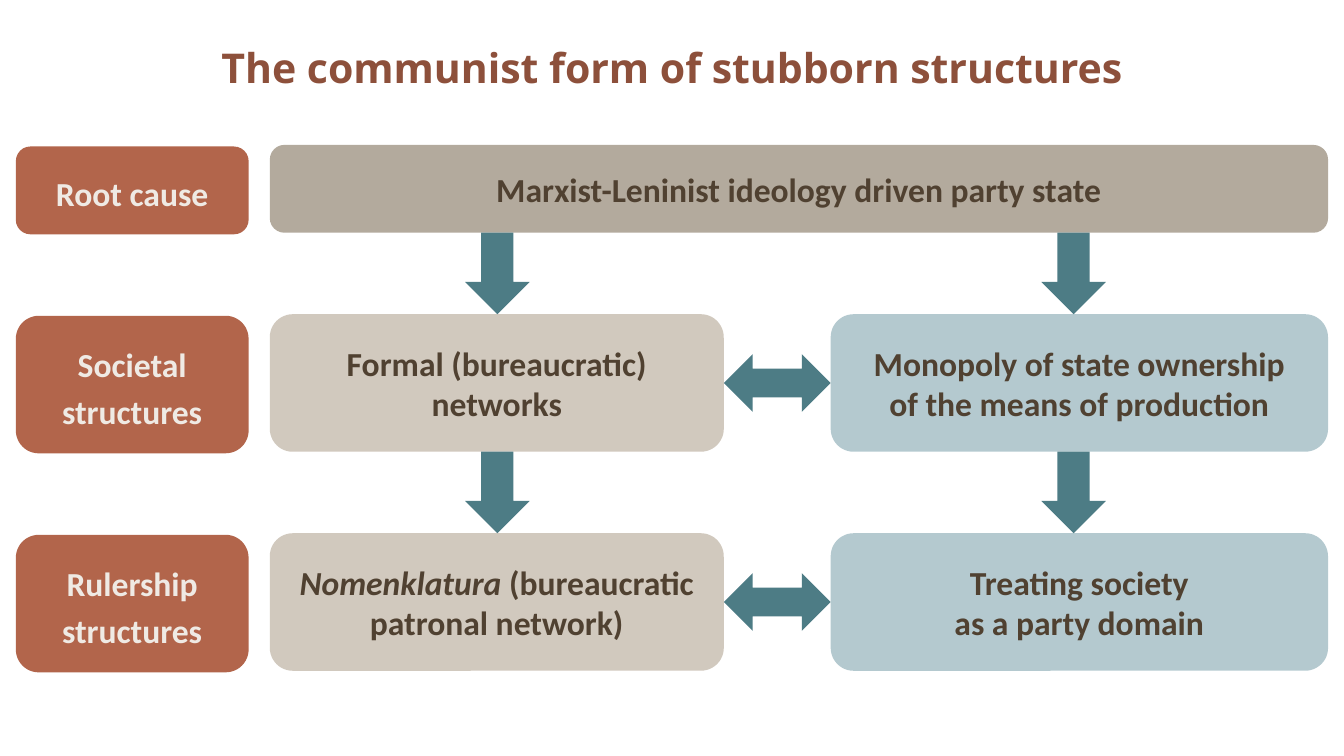
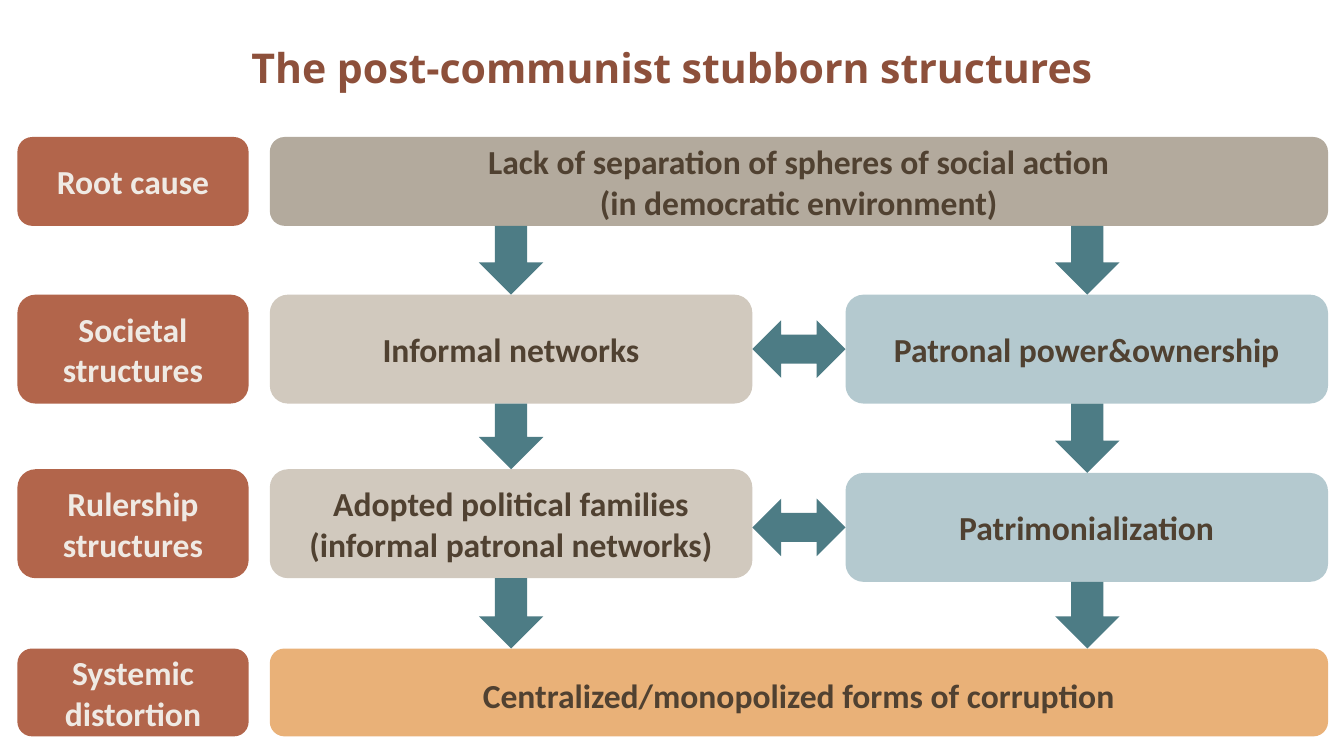
"""Build two slides on communist and post-communist stubborn structures."""
from dataclasses import dataclass

from lxml import etree
from pptx import Presentation
from pptx import util as u
from pptx.dml.color import RGBColor
from pptx.enum import shapes, text
from pptx.oxml.ns import qn

TITLE, LABEL, LABEL_TEXT, BODY_TEXT = "8D503B", "B2654B", "EFEAE4", "504131"
TAUPE, SAND, BLUE, ORANGE, ARROW = "B3AA9D", "D1C9BE", "6B95A1", "E9B178", "4D7C85"
LEFT, RIGHT = 5.1, 25.1
LABEL_RIGHT = 4.7
ARROW_W, ARROW_H = 1.22, 1.09


@dataclass(frozen=True)
class Box:
    """A rectangle in centimetres."""
    x: float
    y: float
    w: float
    h: float

    @property
    def bottom(self) -> float:
        """Return the lower edge."""
        return self.y + self.h


@dataclass(frozen=True)
class Style:
    """The look of a text block."""
    color: str
    size: int = 18
    font: str = "Calibri"
    spacing: float = 1.0
    tight: bool = False


@dataclass(frozen=True)
class Row:
    """A labelled level with one wide cell or two cells."""
    label: str
    top: float
    height: float
    cells: tuple[str, ...]
    fill: str = TAUPE
    right_drop: float = 0
    style: Style = Style(BODY_TEXT)


@dataclass(frozen=True)
class Diagram:
    """The contents and column positions of one slide."""
    title: str
    label_x: float
    label_drop: float
    label_style: Style
    left_w: float
    right_x: float
    arrow_xs: tuple[float, float]
    rows: tuple[Row, ...]


DIAGRAMS = (
    Diagram(
        "The communist form of stubborn structures", 0.3, 0.03,
        Style(LABEL_TEXT, spacing=1.15, tight=True), 8.58, 15.7, (9.4, 20.29),
        (
            Row("Root cause", 2.74, 1.66, ("Marxist-Leninist ideology driven party state",)),
            Row("Societal structures", 5.94, 2.6,
                ("Formal (bureaucratic) networks",
                 "Monopoly of state ownership\nof the means of production")),
            Row("Rulership structures", 10.08, 2.6,
                ("*Nomenklatura *(bureaucratic patronal network)",
                 "Treating society\nas a party domain")),
        ),
    ),
    Diagram(
        "The post-communist stubborn structures", 0.33, 0,
        Style(LABEL_TEXT), 9.12, 15.98, (9.66, 20.55),
        (
            Row("Root cause", 2.59, 1.68,
                ("Lack of separation of spheres of social action\n(in democratic environment)",)),
            Row("Societal structures", 5.57, 2.06,
                ("Informal networks", "Patronal power&ownership")),
            Row("Rulership structures", 8.87, 2.06,
                ("Adopted political families (informal patronal networks)",
                 "Patrimonialization"), right_drop=0.07),
            Row("Systemic distortion", 12.26, 1.66,
                ("Centralized/monopolized forms of corruption",), ORANGE,
                style=Style(BODY_TEXT, spacing=1.15, tight=True)),
        ),
    ),
)


def rgb(value: str) -> RGBColor:
    """Convert a hex string to a colour."""
    return RGBColor.from_string(value)


def place(box: Box) -> tuple[int, ...]:
    """Return a box as lengths."""
    return tuple(u.Cm(v) for v in (box.x, box.y, box.w, box.h))


def write(sp, words: str, style: Style) -> None:
    """Fill a shape with centred bold lines, italic between asterisks."""
    tf = sp.text_frame
    tf.word_wrap = True
    tf.vertical_anchor = text.MSO_ANCHOR.MIDDLE
    if style.tight:
        tf.margin_left = tf.margin_right = u.Cm(0.15)
        tf.margin_top = tf.margin_bottom = u.Cm(0.03)
    for n, line in enumerate(words.split("\n")):
        p = tf.add_paragraph() if n else tf.paragraphs[0]
        p.alignment = text.PP_ALIGN.CENTER
        p.line_spacing = style.spacing
        p.font.name, p.font.size, p.font.bold = style.font, u.Pt(style.size), True
        p.font.color.rgb = rgb(style.color)
        for i, part in enumerate(line.split("*")):
            if part:
                r = p.add_run()
                r.text = part
                if i % 2:
                    r.font.italic = True


def add_block(slide, kind: shapes.MSO_SHAPE, box: Box, fill: str, opacity: int = 100):
    """Add a flat shape without an outline."""
    sp = slide.shapes.add_shape(kind, *place(box))
    sp.shadow.inherit = False
    sp.line.fill.background()
    sp.fill.solid()
    sp.fill.fore_color.rgb = rgb(fill)
    if opacity < 100:
        color = sp.fill._xPr.find(f".//{qn('a:srgbClr')}")
        etree.SubElement(color, qn("a:alpha"), val=str(opacity * 1000))
    return sp


def add_card(slide, box: Box, words: str, fill: str, style: Style, opacity: int = 100) -> None:
    """Add a rounded rectangle with text."""
    write(add_block(slide, shapes.MSO_SHAPE.ROUNDED_RECTANGLE, box, fill, opacity), words, style)


def add_row(slide, d: Diagram, row: Row) -> tuple[Box, Box]:
    """Draw a row and return the boxes under its two arrow columns."""
    label = Box(d.label_x, row.top + d.label_drop, LABEL_RIGHT - d.label_x, row.height)
    add_card(slide, label, row.label, LABEL, d.label_style)
    if len(row.cells) == 1:
        wide = Box(LEFT, row.top, RIGHT - LEFT, row.height)
        add_card(slide, wide, row.cells[0], row.fill, row.style)
        return wide, wide
    left = Box(LEFT, row.top, d.left_w, row.height)
    right = Box(d.right_x, row.top + row.right_drop, RIGHT - d.right_x, row.height)
    add_card(slide, left, row.cells[0], SAND, row.style)
    add_card(slide, right, row.cells[1], BLUE, row.style, 50)
    gap_x = LEFT + d.left_w
    link = Box(gap_x, right.y + (right.h - ARROW_H) / 2, d.right_x - gap_x, ARROW_H)
    add_block(slide, shapes.MSO_SHAPE.LEFT_RIGHT_ARROW, link, ARROW)
    return left, right


def add_diagram(prs, d: Diagram) -> None:
    """Add one slide with its title, rows and arrows."""
    slide = prs.slides.add_slide(prs.slide_layouts[6])
    title = slide.shapes.add_textbox(*place(Box(0.3, 0, 24.8, 2.53)))
    write(title, d.title, Style(TITLE, 22, "Open Sans"))
    levels = [add_row(slide, d, row) for row in d.rows]
    for uppers, lowers in zip(levels, levels[1:]):
        for x, upper, lower in zip(d.arrow_xs, uppers, lowers):
            drop = Box(x - ARROW_W / 2, upper.bottom, ARROW_W, lower.y - upper.bottom)
            add_block(slide, shapes.MSO_SHAPE.DOWN_ARROW, drop, ARROW)


def main() -> None:
    """Build and save the presentation."""
    prs = Presentation()
    prs.slide_width, prs.slide_height = u.Cm(25.4), u.Cm(14.29)
    for d in DIAGRAMS:
        add_diagram(prs, d)
    prs.save("out.pptx")


if __name__ == "__main__":
    main()
